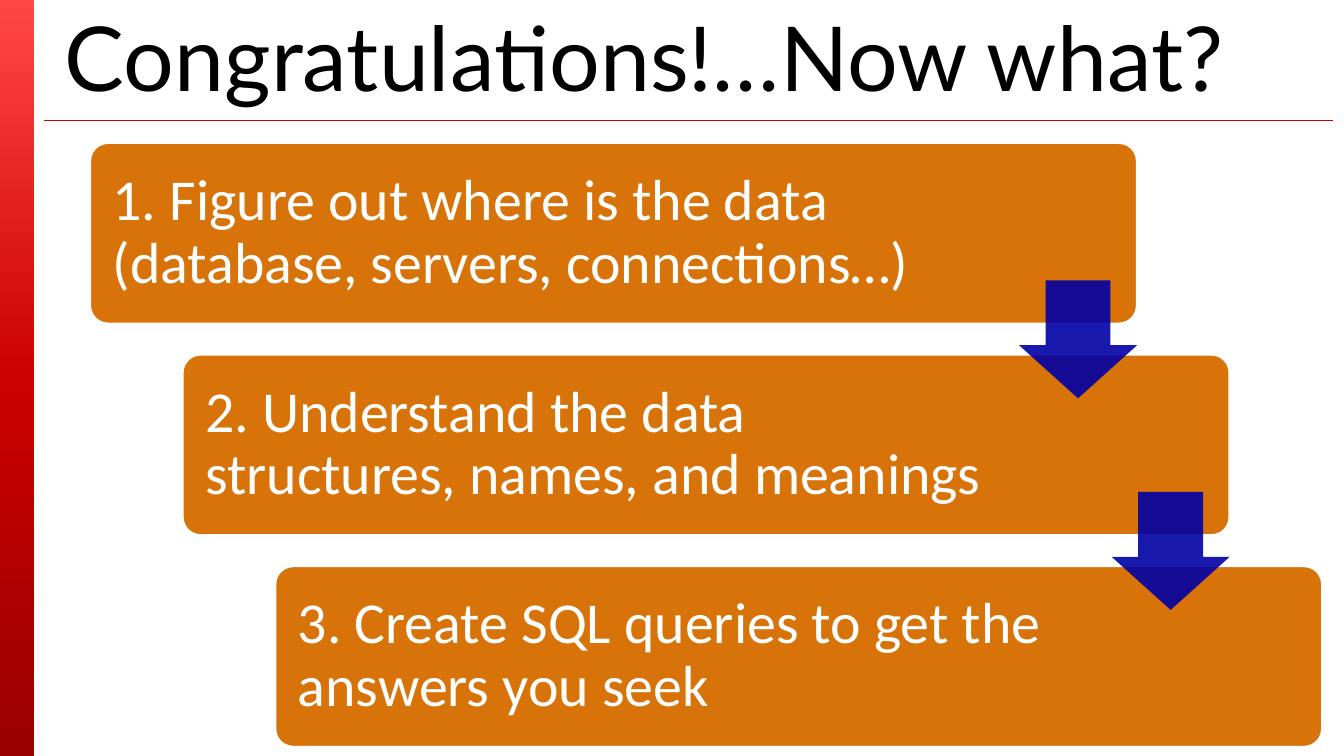
"""Build a slide with three stepped boxes joined by arrows."""
from copy import deepcopy

from lxml import etree
from pptx import Presentation
from pptx.dml.color import RGBColor
from pptx.enum.shapes import MSO_CONNECTOR, MSO_SHAPE
from pptx.enum.text import MSO_ANCHOR, MSO_AUTO_SIZE, PP_ALIGN
from pptx.oxml.ns import qn
from pptx.util import Cm, Pt

RECT, ROUND, DOWN = MSO_SHAPE.RECTANGLE, MSO_SHAPE.ROUNDED_RECTANGLE, MSO_SHAPE.DOWN_ARROW
LINE, MIDDLE, LEFT = MSO_CONNECTOR.STRAIGHT, MSO_ANCHOR.MIDDLE, PP_ALIGN.LEFT

TITLE = "Congratulations!…Now what?"
STEPS = [
    ("1. Figure out where is the data\v(database, servers, connections…)", 3.84),
    ("2. Understand the data structures, names, and meanings", 4.29),
    ("3. Create SQL queries to get the answers you seek", 4.29),
]
THEME = {
    "box": "D77308", "arrow": "0000A5", "rule": "C80000", "ink": "000000", "white": "FFFFFF",
    "bar": [(0, "FF4747"), (0.5, "CC0000"), (1, "990000")],
    "title": ("Lato", 48), "body": ("Calibri", 31),
}
WIDE, HIGH = 25.4, 14.29
BOX_X, BOX_Y, BOX_W, BOX_H = 1.7, 2.7, 19.79, 3.42
STEP_X, STEP_Y = 1.75, 4.0
ARROW, ARROW_Y = 2.23, 2.6
INSET = 0.33


def color(name):
    return RGBColor.from_string(THEME[name])


def style(para, kind, ink):
    para.font.name, size = THEME[kind]
    para.font.size = Pt(size)
    para.font.color.rgb = color(ink)
    para.alignment = LEFT


def add_shape(slide, kind, x, y, w, h, fill=None):
    shape = slide.shapes.add_shape(kind, Cm(x), Cm(y), Cm(w), Cm(h))
    shape.shadow.inherit = False
    shape.line.fill.background()
    if fill:
        shape.fill.solid()
        shape.fill.fore_color.rgb = color(fill)
    return shape


def add_bar(slide):
    bar = add_shape(slide, RECT, 0, 0, 0.64, HIGH)
    bar.fill.gradient()
    bar.fill.gradient_angle = 270
    stops = bar._element.spPr.find(".//" + qn("a:gsLst"))
    stops.append(deepcopy(stops[-1]))
    for stop, (pos, tone) in zip(bar.fill.gradient_stops, THEME["bar"]):
        stop.position = pos
        stop.color.rgb = RGBColor.from_string(tone)


def add_rule(slide):
    rule = slide.shapes.add_connector(LINE, Cm(0.84), Cm(2.28), Cm(25.2), Cm(2.28))
    rule.line.color.rgb = color("rule")
    rule.line.width = Pt(0.75)
    etree.SubElement(rule._element.spPr, qn("a:effectLst"))


def set_title(slide):
    title = slide.shapes.title
    title.left, title.top, title.width, title.height = Cm(0.97), Cm(0.38), Cm(24.33), Cm(1.35)
    frame = title.text_frame
    frame.text = TITLE
    frame.auto_size = MSO_AUTO_SIZE.NONE
    frame.vertical_anchor = MIDDLE
    style(frame.paragraphs[0], "title", "ink")


def add_step(slide, num, text, right):
    box = add_shape(slide, ROUND, BOX_X + num * STEP_X, BOX_Y + num * STEP_Y, BOX_W, BOX_H, "box")
    box.adjustments[0] = 0.1
    box.line.color.rgb = color("white")
    box.line.width = Pt(1.25)
    frame = box.text_frame
    frame.text = text
    frame.word_wrap = True
    frame.vertical_anchor = MIDDLE
    frame.margin_left = frame.margin_top = frame.margin_bottom = Cm(INSET)
    frame.margin_right = Cm(right)
    para = frame.paragraphs[0]
    para.line_spacing = 0.9
    style(para, "body", "white")


def add_arrow(slide, num):
    x = BOX_X + BOX_W - ARROW + num * STEP_X
    y = BOX_Y + ARROW_Y + num * STEP_Y
    arrow = add_shape(slide, DOWN, x, y, ARROW, ARROW, "arrow")
    arrow.adjustments[0], arrow.adjustments[1] = 0.55, 0.45
    tone = arrow._element.spPr.find(".//" + qn("a:srgbClr"))
    etree.SubElement(tone, qn("a:alpha"), val="90000")


def main():
    deck = Presentation()
    deck.slide_width, deck.slide_height = Cm(WIDE), Cm(HIGH)
    slide = deck.slides.add_slide(deck.slide_layouts[5])
    add_bar(slide)
    add_rule(slide)
    set_title(slide)
    for num, (text, right) in enumerate(STEPS):
        add_step(slide, num, text, right)
    for num in range(len(STEPS) - 1):
        add_arrow(slide, num)
    deck.save("out.pptx")


if __name__ == "__main__":
    main()
